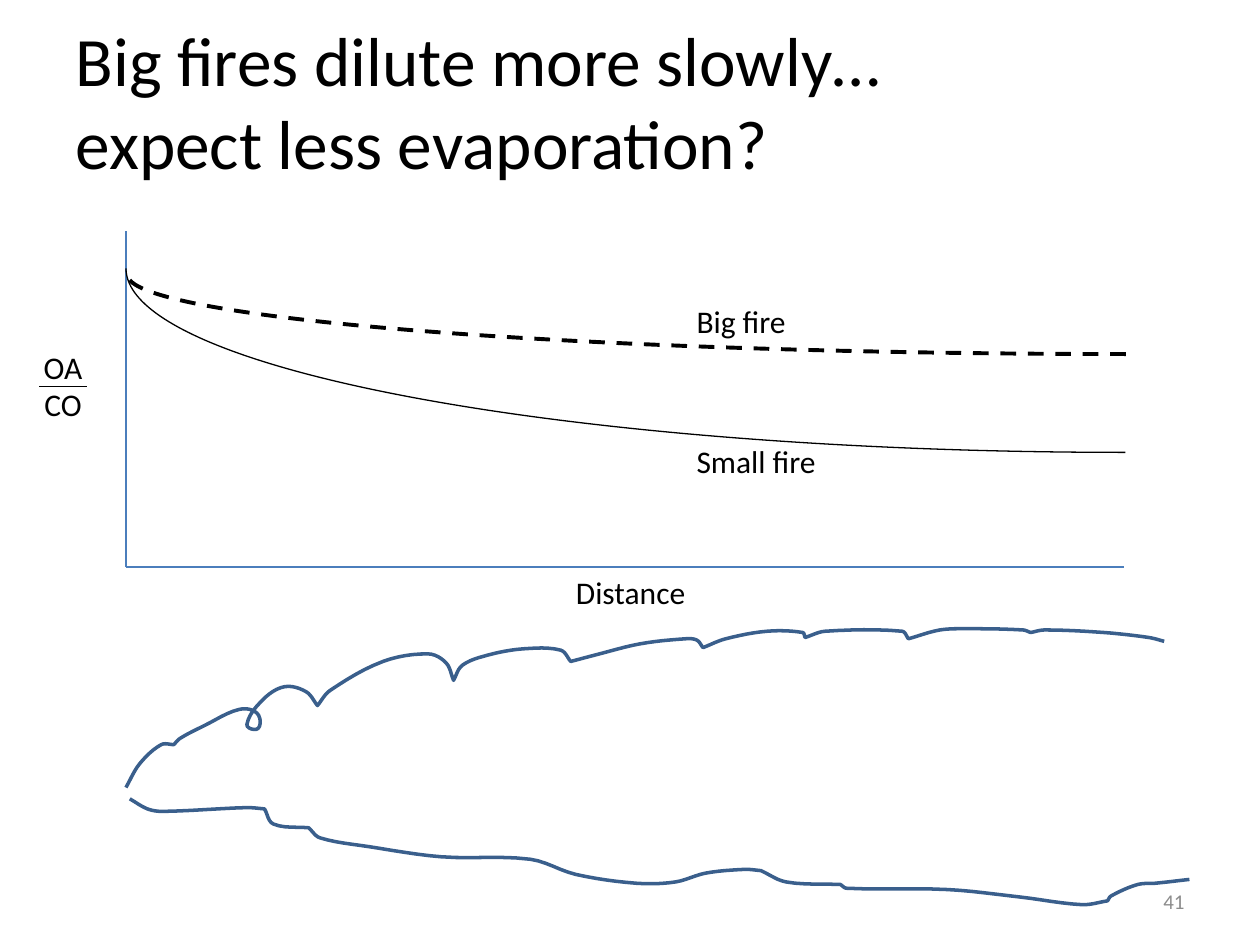
from itertools import pairwise
from math import dist
from lxml.etree import SubElement
from pptx import Presentation
from pptx.dml.color import RGBColor
from pptx.enum.dml import MSO_LINE_DASH_STYLE as Dash
from pptx.enum.shapes import MSO_CONNECTOR as Connector, MSO_SHAPE as Shape
from pptx.enum.text import MSO_ANCHOR as Anchor, MSO_AUTO_SIZE as AutoSize, PP_ALIGN as Align
from pptx.oxml.ns import qn
from pptx.util import Inches, Pt

BLACK, WHITE, GREY = "000000", "FFFFFF", "8C8C8C"
AXIS_BLUE, PLUME_BLUE = "4B7EBC", "3A5F8C"
AXIS_LEFT, AXIS_RIGHT, AXIS_TOP, AXIS_BOTTOM = 1, 8.92, 1.83, 4.5
LABEL_LEFT, LABEL_WIDTH, LABEL_HEIGHT = 5.43, 1.27, 0.4
CURVE_WIDTH = 2 * (AXIS_RIGHT - AXIS_LEFT)
STEPS_PER_BEND = 6

PLUME_TOP_START = (1, 6.25)
PLUME_TOP_PUFFS = [
    [(1.11, 6.06), (1.28, 5.91), (1.38, 5.91)],
    [(1.43, 5.86), (1.62, 5.76), (1.9, 5.63), (2.04, 5.66), (2.05, 5.78), (1.96, 5.75),
     (2.09, 5.55), (2.26, 5.45), (2.43, 5.49), (2.52, 5.6)],
    [(2.62, 5.48), (3.04, 5.25), (3.4, 5.19), (3.54, 5.26), (3.6, 5.4)],
    [(3.67, 5.28), (3.87, 5.2), (4.15, 5.15), (4.45, 5.16), (4.53, 5.25)],
    [(4.72, 5.2), (5.08, 5.11), (5.44, 5.07), (5.53, 5.08), (5.58, 5.14)],
    [(5.76, 5.07), (6.09, 5.01), (6.37, 5.02), (6.39, 5.06)],
    [(6.55, 5.01), (7.16, 5.01), (7.21, 5.07)],
    [(7.46, 5), (7.69, 4.99), (8.12, 5), (8.18, 5.02)],
    [(8.29, 5), (8.76, 5.02), (9.12, 5.06), (9.24, 5.09)],
]
PLUME_BASE_START = (1.03, 6.34)
PLUME_BASE_PUFFS = [
    [(1.17, 6.42), (1.29, 6.44), (1.96, 6.41), (2.1, 6.42)],
    [(2.17, 6.54), (2.45, 6.57)],
    [(2.54, 6.65), (2.93, 6.72), (3.5, 6.8), (4.21, 6.82), (4.57, 6.94), (5.05, 7.01),
     (5.36, 7), (5.6, 6.93), (5.91, 6.9), (6.04, 6.91)],
    [(6.24, 7), (6.67, 7.02)],
    [(6.72, 7.05), (7.52, 7.06), (8.1, 7.12), (8.59, 7.18), (8.79, 7.15)],
    [(8.82, 7.11), (9.03, 7.02), (9.17, 7.01), (9.44, 6.98)],
]


def rgb(code):
    return RGBColor.from_string(code)


def apply(target, formats):
    for attribute, value in formats.items():
        setattr(target, attribute, value)


def place(shape, box):
    apply(shape, dict(zip(("left", "top", "width", "height"), map(Inches, box))))


def style_text(frame, color, size, align):
    for paragraph in frame.paragraphs:
        paragraph.alignment = align
        apply(paragraph.font, {"name": "Calibri", "size": Pt(size)})
        paragraph.font.color.rgb = rgb(color)


def style_line(line, color, width, dash=None):
    line.color.rgb = rgb(color)
    apply(line, {"width": Pt(width), "dash_style": dash})


def add_title(slide, text):
    title = slide.shapes.title
    place(title, (0.5, 0.17, 9, 1.25))
    title.text_frame.text = text
    title.text_frame.vertical_anchor = Anchor.MIDDLE
    style_text(title.text_frame, BLACK, 39.6, Align.LEFT)


def add_label(slide, text, box, align=Align.LEFT, size=18, color=BLACK, anchor=Anchor.TOP):
    label = slide.shapes.add_textbox(*map(Inches, box))
    frame = label.text_frame
    frame.text = text
    apply(frame, {"word_wrap": True, "auto_size": AutoSize.NONE, "vertical_anchor": anchor})
    style_text(frame, color, size, align)
    return label


def add_rule(slide, start, end, color):
    rule = slide.shapes.add_connector(Connector.STRAIGHT, *map(Inches, start + end))
    style_line(rule.line, color, 0.75)
    SubElement(rule._element.spPr, qn("a:effectLst"))


def add_ratio(slide, numerator, denominator):
    ratio = add_label(slide, f"{numerator}\n{denominator}", (0.12, 2.71, 0.76, 0.71), Align.CENTER)
    ratio.fill.solid()
    ratio.fill.fore_color.rgb = rgb(WHITE)
    add_rule(slide, (0.31, 3.07), (0.69, 3.07), BLACK)


def add_decay_curve(slide, left, top, height, width, dash=None):
    curve = slide.shapes.add_shape(Shape.ARC, *map(Inches, (left, top, CURVE_WIDTH, height)))
    curve.rotation = 180
    curve.adjustments[0] = 161.734
    curve.adjustments[1] = 0
    curve.shadow.inherit = False
    curve.fill.background()
    style_line(curve.line, BLACK, width, dash)


def directions(knots):
    for before, after in zip(knots[:1] + knots[:-1], knots[1:] + knots[-1:]):
        span = dist(before, after)
        yield tuple((b - a) / span for a, b in zip(before, after))


def smooth(knots):
    for (start, leaving), (end, arriving) in pairwise(zip(knots, directions(knots))):
        chord = dist(start, end)
        for step in range(1, STEPS_PER_BEND + 1):
            t = step / STEPS_PER_BEND
            blend = t * t * (3 - 2 * t)
            leave, arrive = chord * t * (1 - t) ** 2, chord * t * t * (t - 1)
            yield tuple(
                a + blend * (b - a) + leave * u + arrive * v
                for a, b, u, v in zip(start, end, leaving, arriving)
            )


def add_plume_edge(slide, start, puffs):
    builder = slide.shapes.build_freeform(*map(Inches, start))
    notch = start
    for puff in puffs:
        outline = smooth([notch, *puff])
        builder.add_line_segments([tuple(map(Inches, point)) for point in outline], close=False)
        notch = puff[-1]
    edge = builder.convert_to_shape()
    edge.shadow.inherit = False
    edge.fill.background()
    style_line(edge.line, PLUME_BLUE, 2)


def main():
    deck = Presentation()
    apply(deck, {"slide_width": Inches(10), "slide_height": Inches(7.5)})
    slide = deck.slides.add_slide(deck.slide_layouts[5])

    add_title(slide, "Big fires dilute more slowly… \vexpect less evaporation?")
    add_plume_edge(slide, PLUME_TOP_START, PLUME_TOP_PUFFS)
    add_plume_edge(slide, PLUME_BASE_START, PLUME_BASE_PUFFS)

    origin = (AXIS_LEFT, AXIS_BOTTOM)
    for axis_end in ((AXIS_LEFT, AXIS_TOP), (AXIS_RIGHT, AXIS_BOTTOM)):
        add_rule(slide, origin, axis_end, AXIS_BLUE)
    add_label(slide, "Distance", (3.67, AXIS_BOTTOM, 2.67, LABEL_HEIGHT), Align.CENTER)

    add_decay_curve(slide, AXIS_LEFT, 0.67, 2.92, 0.75)
    add_ratio(slide, "OA", "CO")
    add_decay_curve(slide, AXIS_LEFT + 0.01, 1.55, 1.26, 2.25, Dash.DASH)
    for fire, top in (("Big fire", 2.35), ("Small fire", 3.46)):
        add_label(slide, fire, (LABEL_LEFT, top, LABEL_WIDTH, LABEL_HEIGHT))
    add_label(slide, "41", (7.17, 6.95, 2.33, LABEL_HEIGHT), Align.RIGHT, 12, GREY, Anchor.MIDDLE)

    deck.save("out.pptx")


if __name__ == "__main__":
    main()
